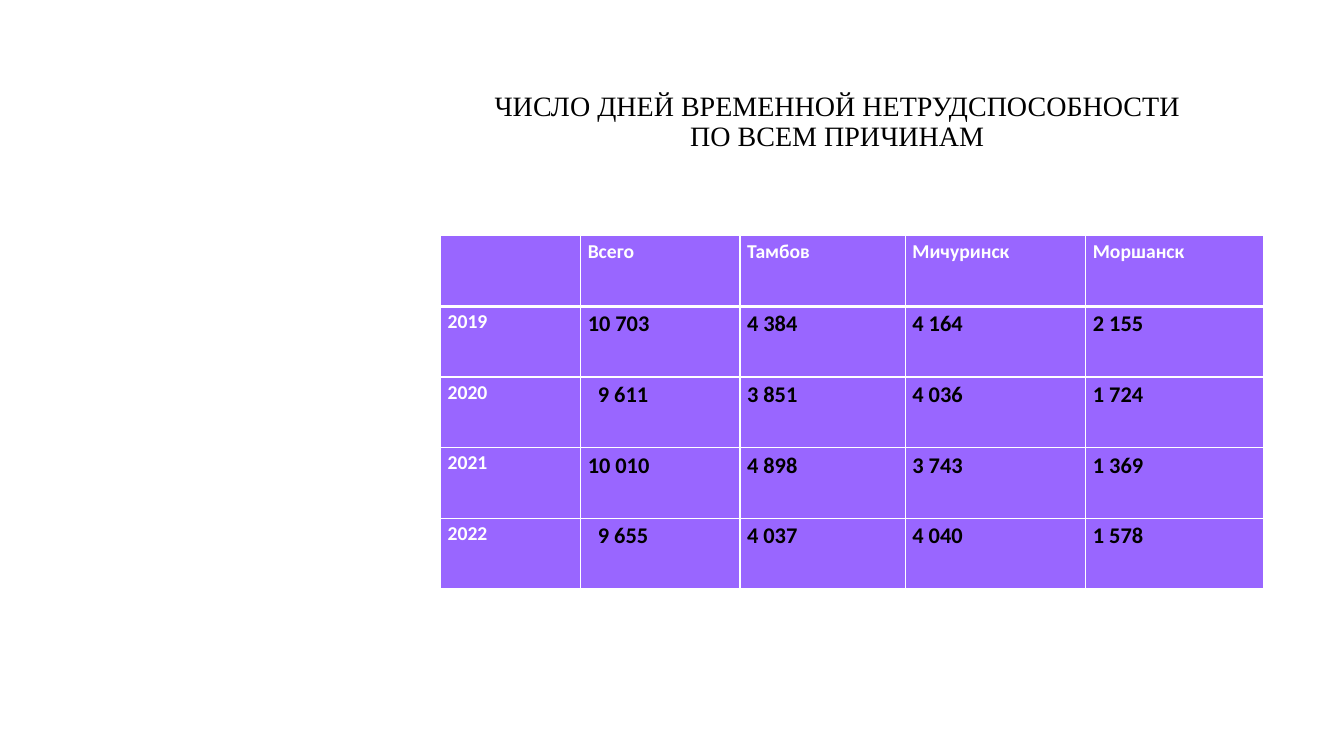
from pptx import Presentation
from pptx.dml.color import RGBColor
from pptx.enum.text import MSO_ANCHOR, PP_ALIGN
from pptx.oxml import parse_xml
from pptx.oxml.ns import nsdecls
from pptx.util import Inches, Pt

CENTER, JUSTIFY = PP_ALIGN.CENTER, PP_ALIGN.JUSTIFY
MIDDLE = MSO_ANCHOR.MIDDLE
WHITE, BLACK, VIOLET = "FFFFFF", "000000", "9966FF"

TITLE = "ЧИСЛО ДНЕЙ ВРЕМЕННОЙ НЕТРУДСПОСОБНОСТИ\nПО ВСЕМ ПРИЧИНАМ"
WIDTHS = [1.39, 1.58, 1.64, 1.79, 1.76]
HEIGHT = 0.7
ROWS = [
    ["", "Всего", "Тамбов", "Мичуринск", "Моршанск"],
    ["2019", "10 703", "4 384", "4 164", "2 155"],
    ["2020", "9 611", "3 851", "4 036", "1 724"],
    ["2021", "10 010", "4 898", "3 743", "1 369"],
    ["2022", "9 655", "4 037", "4 040", "1 578"],
]


def color(code):
    return RGBColor.from_string(code)


def style(par, face, size, code, bold=False):
    font = par.font
    font.name, font.size, font.bold = face, Pt(size), bold
    font.color.rgb = color(code)
    for run in par.runs:
        run.font.name, run.font.size, run.font.bold = face, Pt(size), bold
        run.font.color.rgb = color(code)


def add_title(slide):
    box = slide.shapes.add_textbox(
        Inches(4.19), Inches(0.4), Inches(8.23), Inches(1.63))
    frame = box.text_frame
    frame.word_wrap = True
    frame.vertical_anchor = MIDDLE
    par = frame.paragraphs[0]
    par.text = TITLE
    par.alignment, par.line_spacing = CENTER, 0.9
    style(par, "Times New Roman", 20, BLACK)


def add_border(cell, side, width):
    line = parse_xml(
        f'<a:ln{side} {nsdecls("a")} w="{Pt(width)}"><a:solidFill>'
        f'<a:srgbClr val="{WHITE}"/></a:solidFill></a:ln{side}>')
    cell._tc.get_or_add_tcPr().append(line)


def fill_cell(cell, text, row, col):
    # Thick rule between the header and the years
    widths = {"L": 1, "R": 1, "T": 3 if row == 1 else 1,
              "B": 3 if row == 0 else 1}
    for side, width in widths.items():
        add_border(cell, side, width)
    cell.fill.solid()
    cell.fill.fore_color.rgb = color(VIOLET)

    # Four-digit totals are indented under the five-digit ones
    short = row > 0 and col == 1 and len(text) < 6
    cell.margin_left = Inches(0.17 if short else 0.07)
    cell.margin_right = Inches(0.07)
    cell.margin_top = cell.margin_bottom = 0

    par = cell.text_frame.paragraphs[0]
    par.text = text
    par.alignment, par.line_spacing = JUSTIFY, 1.15
    label = row == 0 or col == 0
    style(par, "Calibri", 14 if label else 16, WHITE if label else BLACK, True)


def add_days(slide):
    table = slide.shapes.add_table(
        len(ROWS), len(WIDTHS), Inches(4.37), Inches(2.34),
        Inches(sum(WIDTHS)), Inches(HEIGHT * len(ROWS))).table
    for column, width in zip(table.columns, WIDTHS):
        column.width = Inches(width)
    for row, texts in enumerate(ROWS):
        table.rows[row].height = Inches(HEIGHT)
        for col, text in enumerate(texts):
            fill_cell(table.cell(row, col), text, row, col)


def main():
    deck = Presentation()
    deck.slide_width, deck.slide_height = Inches(13.33), Inches(7.5)
    slide = deck.slides.add_slide(deck.slide_layouts[6])
    add_days(slide)
    add_title(slide)
    deck.save("out.pptx")


if __name__ == "__main__":
    main()
